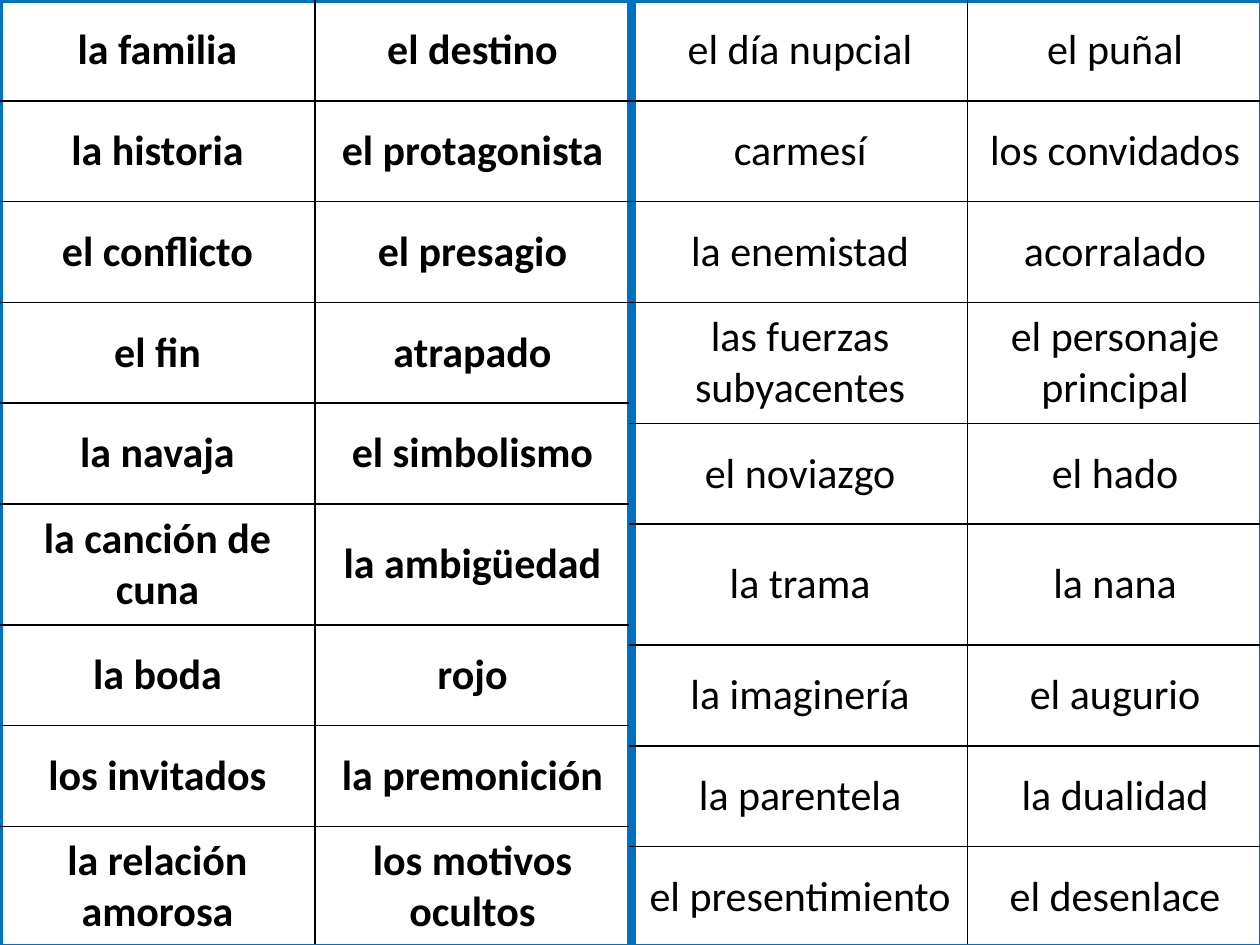
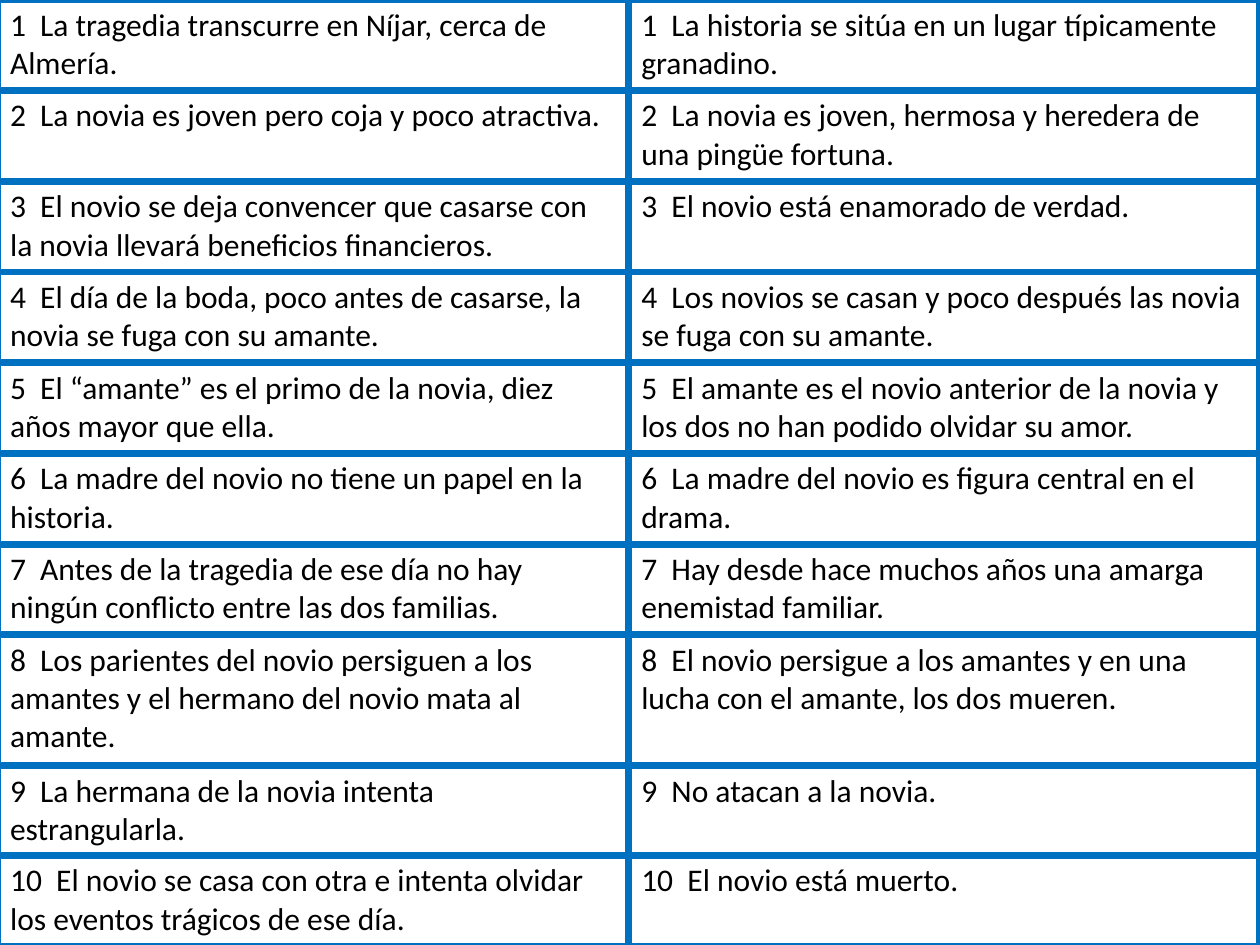
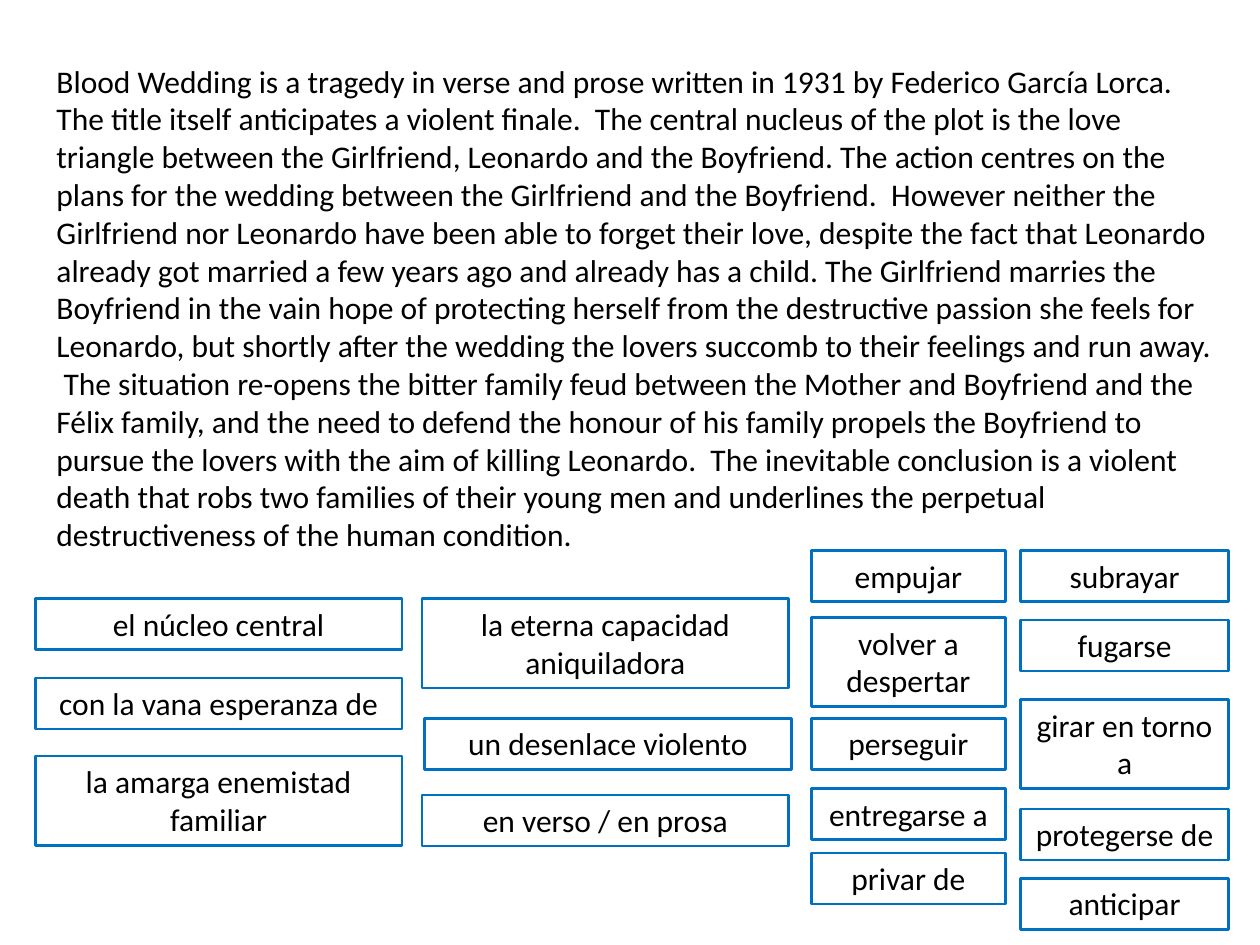
from dataclasses import dataclass

from lxml.etree import SubElement
from pptx import Presentation
from pptx.dml.color import RGBColor
from pptx.enum.shapes import MSO_SHAPE
from pptx.enum.text import MSO_ANCHOR, MSO_AUTO_SIZE, PP_ALIGN
from pptx.oxml.ns import qn
from pptx.presentation import Presentation as Deck
from pptx.slide import Slide
from pptx.table import _Cell as Cell
from pptx.text.text import TextFrame
from pptx.util import Inches, Length, Pt

SLIDE_WIDTH, SLIDE_HEIGHT = Inches(10), Inches(7.5)
GRID_COLUMNS, GRID_ROWS = 100, 75


@dataclass(frozen=True)
class Theme:
    """Colours, line weights in points and type shared by the deck."""

    font: str = "Calibri"
    ink: str = "000000"
    accent: str = "0070C0"
    word_size: int = 24
    body_size: int = 18
    frame_weight: float = 4.5
    rule_weight: float = 1
    card_weight: float = 1.5


@dataclass(frozen=True)
class TextStyle:
    """Look of the text in a box or a table."""

    size: int
    bold: bool = False
    align: PP_ALIGN = PP_ALIGN.LEFT
    anchor: MSO_ANCHOR = MSO_ANCHOR.TOP


@dataclass(frozen=True)
class Line:
    """Colour and weight of a cell border."""

    colour: str
    weight: float


@dataclass(frozen=True)
class Sheet:
    """A table placed on the grid, with its outer and inner lines."""

    left: float
    widths: tuple[float, ...]
    heights: tuple[float, ...]
    rows: tuple[tuple[str, ...], ...]
    style: TextStyle
    frame: Line
    rule: Line


@dataclass(frozen=True)
class Card:
    """A phrase in a stack, with its top row and number of lines."""

    top: float
    text: str
    lines: int = 1
    indent: float = 0


@dataclass(frozen=True)
class Stack:
    """A column of cards that share left edge and width."""

    left: float
    width: float
    cards: tuple[Card, ...]


THEME = Theme()
FRAME = Line(THEME.accent, THEME.frame_weight)
RULE = Line(THEME.ink, THEME.rule_weight)
BODY = TextStyle(THEME.body_size)
CARD = TextStyle(THEME.body_size, align=PP_ALIGN.CENTER)
WORD = TextStyle(THEME.word_size, align=PP_ALIGN.CENTER, anchor=MSO_ANCHOR.MIDDLE)
BOLD_WORD = TextStyle(THEME.word_size, True, PP_ALIGN.CENTER, MSO_ANCHOR.MIDDLE)
SHORT_ROW, TALL_ROW = 8, 9.6

KEY_WORDS = (
    ("la familia", "el destino"),
    ("la historia", "el protagonista"),
    ("el conflicto", "el presagio"),
    ("el fin", "atrapado"),
    ("la navaja", "el simbolismo"),
    ("la canción de cuna", "la ambigüedad"),
    ("la boda", "rojo"),
    ("los invitados", "la premonición"),
    ("la relación amorosa", "los motivos ocultos"),
)
SYNONYMS = (
    ("el día nupcial", "el puñal"),
    ("carmesí", "los convidados"),
    ("la enemistad", "acorralado"),
    ("las fuerzas subyacentes", "el personaje principal"),
    ("el noviazgo", "el hado"),
    ("la trama", "la nana"),
    ("la imaginería", "el augurio"),
    ("la parentela", "la dualidad"),
    ("el presentimiento", "el desenlace"),
)
STATEMENTS = (
    ("La tragedia transcurre en Níjar, cerca de Almería.",
     "La historia se sitúa en un lugar típicamente granadino."),
    ("La novia es joven pero coja y poco atractiva.",
     "La novia es joven, hermosa y heredera de una pingüe fortuna."),
    ("El novio se deja convencer que casarse con la novia llevará beneficios financieros.",
     "El novio está enamorado de verdad."),
    ("El día de la boda, poco antes de casarse, la novia se fuga con su amante.",
     "Los novios se casan y poco después las novia se fuga con su amante."),
    ("El “amante” es el primo de la novia, diez años mayor que ella.",
     "El amante es el novio anterior de la novia y los dos no han podido olvidar su amor."),
    ("La madre del novio no tiene un papel en la historia.",
     "La madre del novio es figura central en el drama."),
    ("Antes de la tragedia de ese día no hay ningún conflicto entre las dos familias.",
     "Hay desde hace muchos años una amarga enemistad familiar."),
    ("Los parientes del novio persiguen a los amantes y el hermano del novio mata al amante.",
     "El novio persigue a los amantes y en una lucha con el amante, los dos mueren."),
    ("La hermana de la novia intenta estrangularla.",
     "No atacan a la novia."),
    ("El novio se casa con otra e intenta olvidar los eventos trágicos de ese día.",
     "El novio está muerto."),
)
SUMMARY = (
    "Blood Wedding is a tragedy in verse and prose written in 1931 by Federico García Lorca.",
    "The title itself anticipates a violent finale.",
    "The central nucleus of the plot is the love triangle between the Girlfriend, Leonardo and "
    "the Boyfriend. The action centres on the plans for the wedding between the Girlfriend and "
    "the Boyfriend.",
    "However neither the Girlfriend nor Leonardo have been able to forget their love, despite "
    "the fact that Leonardo already got married a few years ago and already has a child. The "
    "Girlfriend marries the Boyfriend in the vain hope of protecting herself from the "
    "destructive passion she feels for Leonardo, but shortly after the wedding the lovers "
    "succomb to their feelings and run away.",
    "The situation re-opens the bitter family feud between the Mother and Boyfriend and the "
    "Félix family, and the need to defend the honour of his family propels the Boyfriend to "
    "pursue the lovers with the aim of killing Leonardo.",
    "The inevitable conclusion is a violent death that robs two families of their young men "
    "and underlines the perpetual destructiveness of the human condition.",
)
STACKS = (
    Stack(2.8, 29.1, (
        Card(47.5, "el núcleo central"),
        Card(53.8, "con la vana esperanza de"),
        Card(60, "la amarga enemistad familiar", 2),
    )),
    Stack(33.5, 29.1, (
        Card(47.5, "la eterna capacidad aniquiladora", 2),
        Card(57, "un desenlace violento", indent=0.2),
        Card(63.1, "en verso / en prosa"),
    )),
    Stack(64.4, 15.4, (
        Card(43.7, "empujar"),
        Card(49, "volver a despertar", 2),
        Card(57, "perseguir"),
        Card(62.6, "entregarse a"),
        Card(67.7, "privar de"),
    )),
    Stack(81, 16.5, (
        Card(43.7, "subrayar"),
        Card(49.2, "fugarse"),
        Card(55.5, "girar en torno a", 2),
        Card(64.2, "protegerse de"),
        Card(69.7, "anticipar"),
    )),
)


def across(columns: float) -> Length:
    """Turn grid columns into a length."""
    return Length(round(SLIDE_WIDTH * columns / GRID_COLUMNS))


def down(rows: float) -> Length:
    """Turn grid rows into a length."""
    return Length(round(SLIDE_HEIGHT * rows / GRID_ROWS))


def write(frame: TextFrame, text: str, style: TextStyle) -> None:
    """Put one styled paragraph into a text frame."""
    frame.text = text
    para = frame.paragraphs[0]
    para.alignment = style.align
    para.font.name = THEME.font
    para.font.size = Pt(style.size)
    para.font.bold = style.bold
    para.font.color.rgb = RGBColor.from_string(THEME.ink)


def add_box(page: Slide, left: float, top: float, width: float, height: float,
            text: str, style: TextStyle, outlined: bool) -> None:
    """Draw an unfilled text box or an outlined rectangle that fits its text."""
    place = across(left), down(top), across(width), down(height)
    if outlined:
        box = page.shapes.add_shape(MSO_SHAPE.RECTANGLE, *place)
        box.shadow.inherit = False
        box.fill.background()
        box.line.color.rgb = RGBColor.from_string(THEME.accent)
        box.line.width = Pt(THEME.card_weight)
    else:
        box = page.shapes.add_textbox(*place)
    frame = box.text_frame
    frame.word_wrap = True
    frame.auto_size = MSO_AUTO_SIZE.SHAPE_TO_FIT_TEXT
    frame.vertical_anchor = style.anchor
    write(frame, text, style)


def add_stack(page: Slide, stack: Stack) -> None:
    """Draw every card of a stack."""
    for card in stack.cards:
        height = 1 + 3.05 * card.lines
        add_box(page, stack.left + card.indent, card.top, stack.width, height,
                card.text, CARD, outlined=True)


def set_border(cell: Cell, side: str, line: Line) -> None:
    """Give one side of a cell a solid line."""
    properties = cell._tc.get_or_add_tcPr()
    border = SubElement(properties, qn(f"a:ln{side}"), w=str(Pt(line.weight)))
    fill = SubElement(border, qn("a:solidFill"))
    SubElement(fill, qn("a:srgbClr"), val=line.colour)


def add_sheet(page: Slide, sheet: Sheet) -> None:
    """Draw a table with framed edges and ruled cells."""
    row_count, column_count = len(sheet.heights), len(sheet.widths)
    table = page.shapes.add_table(
        row_count, column_count, across(sheet.left), down(0),
        across(sum(sheet.widths)), down(sum(sheet.heights))).table
    table.first_row = table.horz_banding = False
    for column, width in zip(table.columns, sheet.widths):
        column.width = across(width)
    for row, height in zip(table.rows, sheet.heights):
        row.height = down(height)
    for row_index, texts in enumerate(sheet.rows):
        for column_index, text in enumerate(texts):
            cell = table.cell(row_index, column_index)
            cell.vertical_anchor = sheet.style.anchor
            write(cell.text_frame, text, sheet.style)
            on_edge = {
                "L": column_index == 0,
                "R": column_index == column_count - 1,
                "T": row_index == 0,
                "B": row_index == row_count - 1,
            }
            for side, framed in on_edge.items():
                set_border(cell, side, sheet.frame if framed else sheet.rule)
            cell.fill.background()


def row_heights(count: int, tall: tuple[int, ...]) -> tuple[float, ...]:
    """List word row heights, with the given rows tall."""
    return tuple(TALL_ROW if index in tall else SHORT_ROW for index in range(count))


def add_page(deck: Deck) -> Slide:
    """Append a blank slide."""
    return deck.slides.add_slide(deck.slide_layouts[6])


def build_word_page(deck: Deck) -> None:
    """Set key words beside their synonyms."""
    page = add_page(deck)
    add_sheet(page, Sheet(0, (25, 25), row_heights(len(KEY_WORDS), (5, 8)),
                          KEY_WORDS, BOLD_WORD, FRAME, RULE))
    add_sheet(page, Sheet(50.2, (26.6, 23.4), row_heights(len(SYNONYMS), (3, 5)),
                          SYNONYMS, WORD, FRAME, RULE))


def build_statement_page(deck: Deck) -> None:
    """Set numbered statements on the two stories side by side."""
    numbered = tuple(
        tuple(f"{number}  {text}" for text in pair)
        for number, pair in enumerate(STATEMENTS, start=1))
    heights = (7.2,) * 7 + (10.4, 6.7, 7.2)
    add_sheet(add_page(deck), Sheet(-0.2, (50.1, 50.1), heights, numbered, BODY, FRAME, FRAME))


def build_summary_page(deck: Deck) -> None:
    """Set the summary above the phrase cards."""
    page = add_page(deck)
    add_box(page, 3.5, 4.4, 93.7, 40.4, "  ".join(SUMMARY), BODY, outlined=False)
    for stack in STACKS:
        add_stack(page, stack)


def main() -> None:
    """Build and save the deck."""
    deck = Presentation()
    deck.slide_width, deck.slide_height = SLIDE_WIDTH, SLIDE_HEIGHT
    build_word_page(deck)
    build_statement_page(deck)
    build_summary_page(deck)
    deck.save("out.pptx")


if __name__ == "__main__":
    main()
